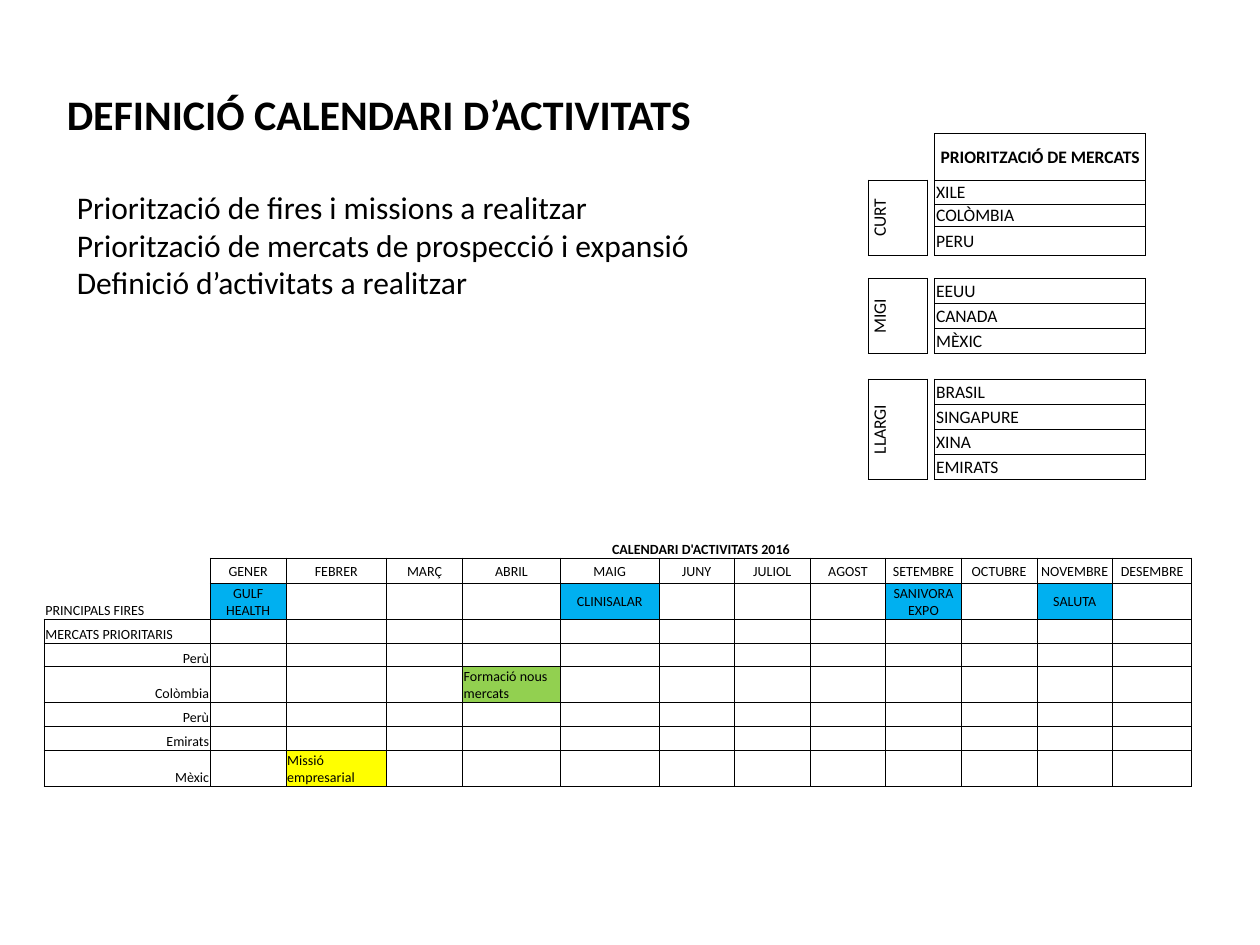
from dataclasses import dataclass, field
from typing import Optional

from lxml.etree import SubElement
from pptx import Presentation
from pptx.dml.color import RGBColor
from pptx.enum.text import MSO_ANCHOR as Anchor, MSO_AUTO_SIZE as AutoSize, PP_ALIGN as Align
from pptx.oxml.ns import qn
from pptx.util import Inches, Pt

BLACK = RGBColor(0x00, 0x00, 0x00)
BLUE = RGBColor(0x00, 0xB0, 0xF0)
GREEN = RGBColor(0x92, 0xD0, 0x50)
YELLOW = RGBColor(0xFF, 0xFF, 0x00)
FONT = "Calibri"
PLAIN_TABLE_STYLE = "{2D5ABB26-0587-4C30-8999-92F81FD0307C}"


@dataclass
class Entry:
    text: str = ""
    align: Align = Align.LEFT
    anchor: Anchor = Anchor.MIDDLE
    bold: bool = False
    fill: Optional[RGBColor] = None
    boxed: bool = True
    vertical: bool = False


@dataclass
class Grid:
    left: float
    top: float
    columns: list[float]
    rows: list[float]
    size: float
    entries: dict[tuple[int, int], Entry] = field(default_factory=dict)
    merges: list[tuple[int, int, int, int]] = field(default_factory=list)


def box_cell(properties) -> None:
    """Draw a thin black line on all four sides of a cell."""
    for side in ("lnL", "lnR", "lnT", "lnB"):
        line = SubElement(properties, qn(f"a:{side}"), w=str(Pt(0.5)))
        SubElement(SubElement(line, qn("a:solidFill")), qn("a:srgbClr"), val=str(BLACK))


def fill_cell(cell, entry: Entry, size: float) -> None:
    cell.margin_left = cell.margin_right = cell.margin_top = Inches(0.01)
    cell.margin_bottom = 0
    cell.vertical_anchor = entry.anchor
    properties = cell._tc.get_or_add_tcPr()
    if entry.vertical:
        properties.set("vert", "vert270")
    if entry.boxed:
        box_cell(properties)
    if entry.fill is None:
        cell.fill.background()
    else:
        cell.fill.solid()
        cell.fill.fore_color.rgb = entry.fill
    paragraph = cell.text_frame.paragraphs[0]
    paragraph.alignment = entry.align
    if entry.text:
        paragraph.text = entry.text
        style_runs(paragraph, size, entry.bold)
    else:
        SubElement(paragraph._p, qn("a:endParaRPr"), sz=str(size * 100))


def style_runs(paragraph, size: float, bold: bool) -> None:
    for run in paragraph.runs:
        run.font.name = FONT
        run.font.size = Pt(size)
        run.font.bold = bold
        run.font.color.rgb = BLACK


def draw_grid(slide, grid: Grid) -> None:
    table = slide.shapes.add_table(
        len(grid.rows), len(grid.columns), Inches(grid.left), Inches(grid.top),
        Inches(sum(grid.columns)), Inches(sum(grid.rows))).table
    table.first_row = table.horz_banding = False
    table._tbl.tblPr.find(qn("a:tableStyleId")).text = PLAIN_TABLE_STYLE
    for column, width in zip(table.columns, grid.columns):
        column.width = Inches(width)
    for row, height in zip(table.rows, grid.rows):
        row.height = Inches(height)
    for r in range(len(grid.rows)):
        for c in range(len(grid.columns)):
            fill_cell(table.cell(r, c), grid.entries.get((r, c), Entry()), grid.size)
    for top, left, bottom, right in grid.merges:
        table.cell(top, left).merge(table.cell(bottom, right))


def place_text(placeholder, box: tuple, lines: list[str], size: float, bold: bool) -> None:
    placeholder.left, placeholder.top, placeholder.width, placeholder.height = map(Inches, box)
    frame = placeholder.text_frame
    frame.text = "\n".join(lines)
    frame.auto_size = AutoSize.NONE
    frame.word_wrap = True
    frame.vertical_anchor = Anchor.MIDDLE
    for paragraph in frame.paragraphs:
        paragraph.alignment = Align.LEFT
        paragraph.space_before = Pt(0)
        properties = paragraph._p.get_or_add_pPr()
        properties.set("marL", "0")
        properties.set("indent", "0")
        SubElement(properties, qn("a:buNone"))
        style_runs(paragraph, size, bold)


def market_grid() -> Grid:
    terms = {
        "CURT": ["XILE", "COLÒMBIA", "PERU"],
        "MIGI": ["EEUU", "CANADA", "MÈXIC"],
        "LLARGI": ["BRASIL", "SINGAPURE", "XINA", "EMIRATS"],
    }
    grid = Grid(6.89, 1.06, [0.47, 0.06, 1.67],
                [0.37, 0.19, 0.17, 0.23, 0.18] + [0.2] * 8, size=10)
    grid.entries = {(r, c): Entry(boxed=False) for r in range(13) for c in range(3)}
    grid.entries[0, 2] = Entry("PRIORITZACIÓ DE MERCATS", Align.CENTER, bold=True)
    first = 1
    for term, markets in terms.items():
        last = first + len(markets) - 1
        for row, market in enumerate(markets, first):
            grid.entries[row, 0] = Entry()
            grid.entries[row, 2] = Entry(market)
        grid.entries[first, 0] = Entry(term, Align.CENTER, vertical=True)
        grid.merges.append((first, 0, last, 0))
        first = last + 2
    return grid


def calendar_grid() -> Grid:
    months = ["GENER", "FEBRER", "MARÇ", "ABRIL", "MAIG", "JUNY", "JULIOL", "AGOST",
              "SETEMBRE", "OCTUBRE", "NOVEMBRE", "DESEMBRE"]
    fairs = {"GENER": "GULF HEALTH", "MAIG": "CLINISALAR",
             "SETEMBRE": "SANIVORA EXPO", "NOVEMBRE": "SALUTA"}
    countries = ["Perù", "Colòmbia", "Perù", "Emirats", "Mèxic"]
    widths = {"FEBRER": 0.8, "ABRIL": 0.78, "MAIG": 0.78, "DESEMBRE": 0.63}
    grid = Grid(0.35, 3.91, [1.32] + [widths.get(month, 0.6) for month in months],
                [0.52, 0.2, 0.28, 0.19, 0.19, 0.28, 0.19, 0.19, 0.28], size=8)
    entries = grid.entries
    for column in range(13):
        entries[0, column] = Entry(boxed=False)
    entries[0, 1] = Entry("CALENDARI D'ACTIVITATS 2016", Align.CENTER, Anchor.BOTTOM,
                          bold=True, boxed=False)
    grid.merges.append((0, 1, 0, 12))
    entries[1, 0] = Entry(boxed=False)
    entries[2, 0] = Entry("PRINCIPALS FIRES", anchor=Anchor.BOTTOM, boxed=False)
    entries[3, 0] = Entry("MERCATS PRIORITARIS", anchor=Anchor.BOTTOM)
    for column, month in enumerate(months, 1):
        entries[1, column] = Entry(month, Align.CENTER)
        if month in fairs:
            entries[2, column] = Entry(fairs[month], Align.CENTER, fill=BLUE)
    for row, country in enumerate(countries, 4):
        entries[row, 0] = Entry(country, Align.RIGHT, Anchor.BOTTOM)
    entries[5, 4] = Entry("Formació nous mercats", anchor=Anchor.BOTTOM, fill=GREEN)
    entries[8, 2] = Entry("Missió empresarial", anchor=Anchor.BOTTOM, fill=YELLOW)
    return grid


def main() -> None:
    deck = Presentation()
    deck.slide_width, deck.slide_height = Inches(10), Inches(7.5)
    slide = deck.slides.add_slide(deck.slide_layouts[1])
    place_text(slide.shapes.title, (0.43, 0.52, 8.53, 0.77),
               ["DEFINICIÓ CALENDARI D’ACTIVITATS"], 24, True)
    place_text(slide.placeholders[1], (0.51, 1.31, 8.53, 1.26),
               ["Priorització de fires i missions a realitzar",
                "Priorització de mercats de prospecció i expansió",
                "Definició d’activitats a realitzar"], 18, False)
    draw_grid(slide, market_grid())
    draw_grid(slide, calendar_grid())
    deck.save("out.pptx")


if __name__ == "__main__":
    main()
